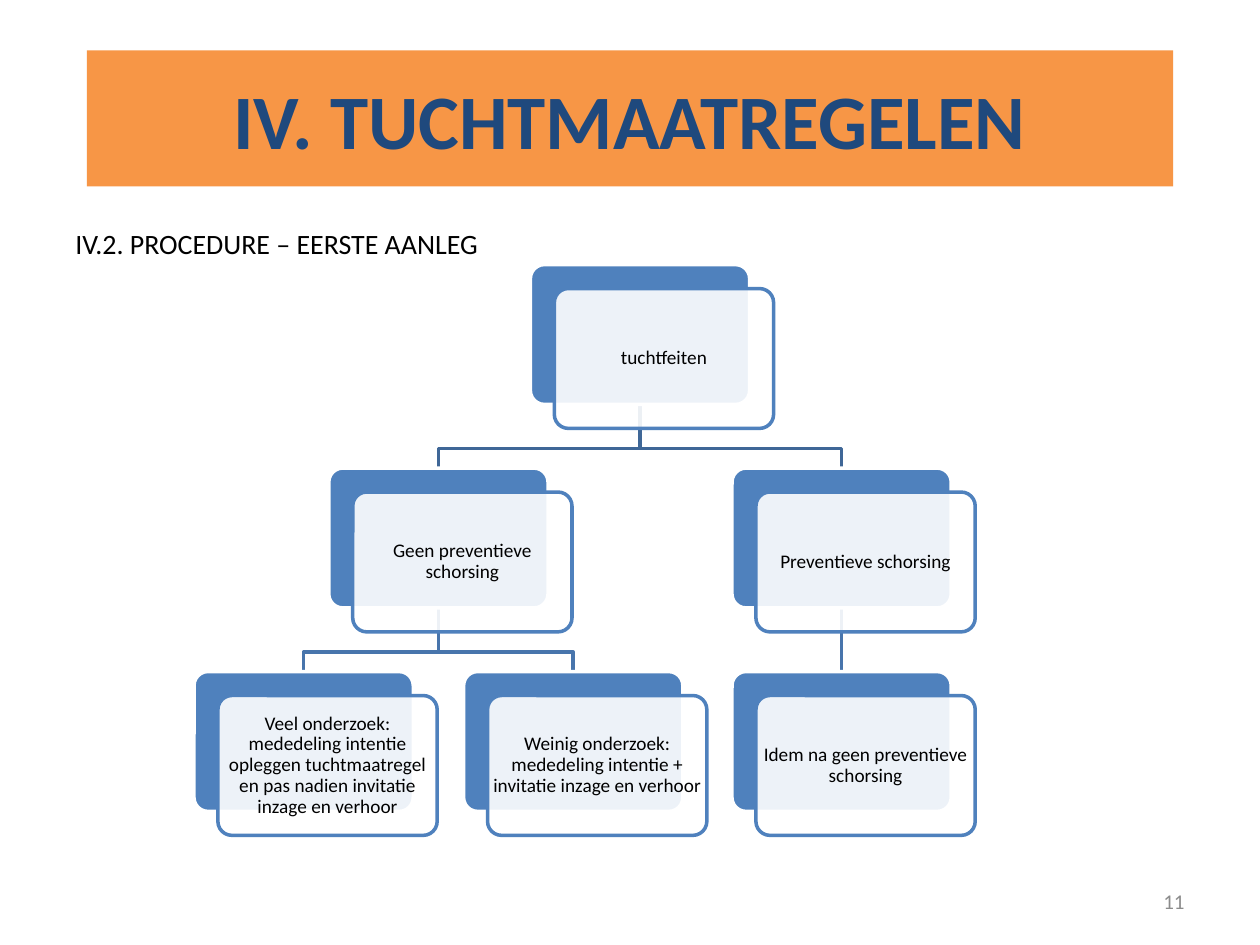
"""Build a slide with a tree of disciplinary steps under a title band."""
from lxml import etree
from pptx import Presentation
from pptx.dml.color import RGBColor
from pptx.enum.shapes import MSO_CONNECTOR, MSO_SHAPE
from pptx.enum.text import MSO_ANCHOR, PP_ALIGN
from pptx.oxml.ns import qn
from pptx.util import Inches, Pt

ROUND = MSO_SHAPE.ROUNDED_RECTANGLE
LINE = MSO_CONNECTOR.STRAIGHT
MID, TOP = MSO_ANCHOR.MIDDLE, MSO_ANCHOR.TOP
LEFT, CENTER, RIGHT = PP_ALIGN.LEFT, PP_ALIGN.CENTER, PP_ALIGN.RIGHT

COLORS = {
    "band": "F79646", "title": "1F497D", "text": "000000", "page": "8C8C8C",
    "box": "4F81BD", "white": "FFFFFF", "link1": "3F6797", "link2": "4875AC",
}


def color(name):
    return RGBColor.from_string(COLORS[name])


def write(shape, text, size, tint, align, anchor, bold=False):
    frame = shape.text_frame
    frame.text = text
    frame.word_wrap = True
    frame.vertical_anchor = anchor
    para = frame.paragraphs[0]
    para.alignment = align
    font = para.runs[0].font
    looks = {"name": "Calibri", "size": Pt(size), "bold": bold}
    for key, value in looks.items():
        setattr(font, key, value)
    font.color.rgb = color(tint)
    return frame


prs = Presentation()
prs.slide_width, prs.slide_height = Inches(10), Inches(7.5)
slide = prs.slides.add_slide(prs.slide_layouts[5])
shapes = slide.shapes

title = shapes.title
place = {"left": 0.69, "top": 0.4, "width": 8.62, "height": 1.08}
for key, value in place.items():
    setattr(title, key, Inches(value))
title.fill.solid()
title.fill.fore_color.rgb = color("band")
write(title, "IV. TUCHTMAATREGELEN", 44, "title", CENTER, MID, True)

labels = [
    ((0.5, 1.75, 9, 0.4), "IV.2. PROCEDURE – EERSTE AANLEG", 16, "text", LEFT, TOP),
    ((7.17, 6.95, 2.33, 0.4), "11", 12, "page", RIGHT, MID),
]
for spot, *words in labels:
    write(shapes.add_textbox(*map(Inches, spot)), *words)

WIDTH, HEIGHT, SHIFT = 1.74, 1.11, 0.19
FIRST, STEP = 2.1, 1.615
BEND = 0.35

nodes = {
    "facts": (4.21, 0, "tuchtfeiten"),
    "free": (2.61, 1, "Geen preventieve schorsing"),
    "much": (1.54, 2, "Veel onderzoek: mededeling intentie opleggen "
             "tuchtmaatregel en pas nadien invitatie inzage en verhoor"),
    "little": (3.68, 2, "Weinig onderzoek: mededeling intentie + "
               "invitatie inzage en verhoor"),
    "barred": (5.81, 1, "Preventieve schorsing"),
    "same": (5.81, 2, "Idem na geen preventieve schorsing"),
}
links = [("barred", "same"), ("facts", "barred"), ("free", "little"),
         ("free", "much"), ("facts", "free")]

for start, end in links:
    left, row, _ = nodes[start]
    x1, x2 = (Inches(x + WIDTH / 2) for x in (left, nodes[end][0]))
    y1 = Inches(FIRST + row * STEP + HEIGHT)
    y2 = Inches(FIRST + (row + 1) * STEP)
    if x1 == x2:
        link = shapes.add_connector(LINE, x1, y1, x2, y2)
        etree.SubElement(link._element.spPr, qn("a:effectLst"))
    else:
        bend = y1 + Inches(BEND)
        path = shapes.build_freeform(x1, y1)
        path.add_line_segments([(x1, bend), (x2, bend), (x2, y2)], close=False)
        link = path.convert_to_shape()
        link.fill.background()
        link.shadow.inherit = False
    link.line.color.rgb = color(f"link{row + 1}")
    link.line.width = Pt(2)

for left, row, text in nodes.values():
    top = FIRST + row * STEP
    for shift, fill, edge in ((0, "box", "white"), (SHIFT, "white", "box")):
        spot = (left + shift, top + shift, WIDTH, HEIGHT)
        card = shapes.add_shape(ROUND, *map(Inches, spot))
        card.adjustments[0] = 0.1
        card.shadow.inherit = False
        card.fill.solid()
        card.fill.fore_color.rgb = color(fill)
        card.line.color.rgb = color(edge)
        card.line.width = Pt(2)
    tone = card._element.spPr.find(qn("a:solidFill"))[0]
    etree.SubElement(tone, qn("a:alpha"), val="90000")
    frame = write(card, text, 11, "text", CENTER, MID)
    frame.paragraphs[0].line_spacing = 0.9
    for side in ("left", "right", "top", "bottom"):
        setattr(frame, f"margin_{side}", Inches(0.01))

prs.save("out.pptx")
